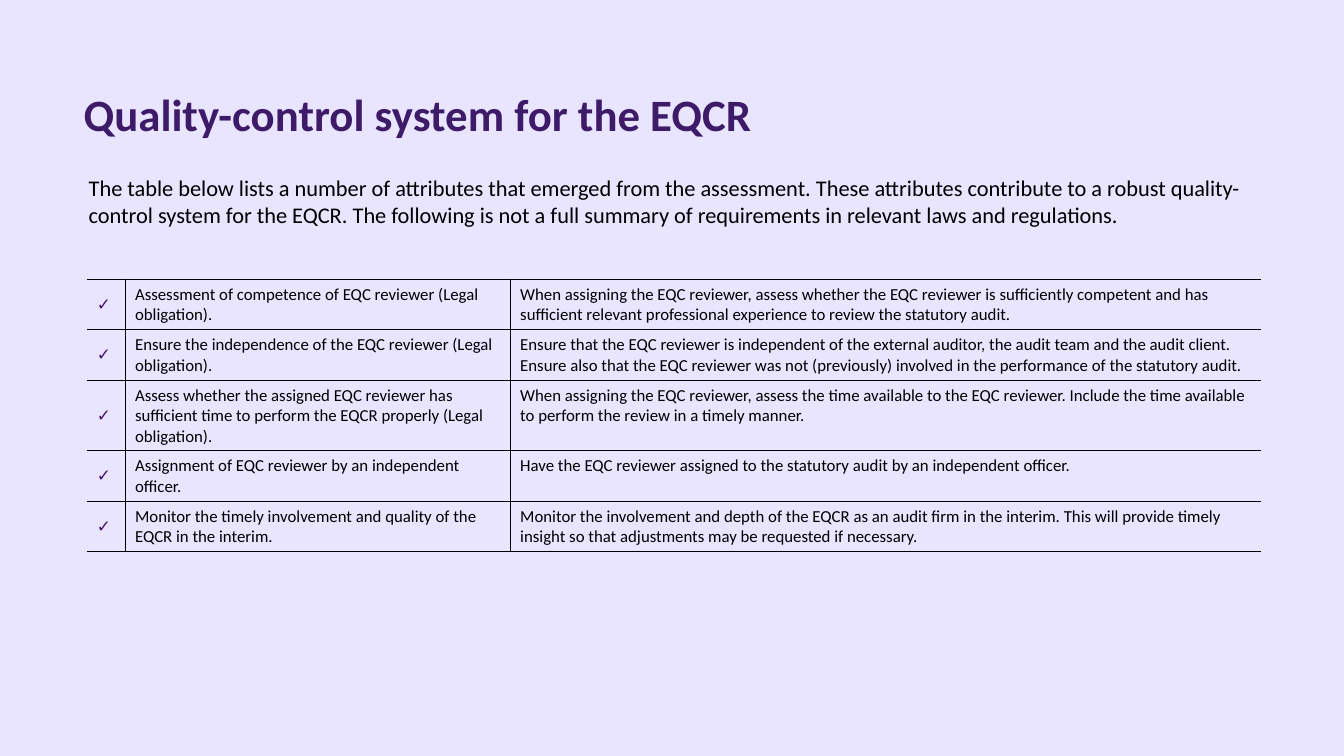
from dataclasses import dataclass

from lxml import etree
from pptx import Presentation
from pptx import util as u
from pptx.dml.color import RGBColor
from pptx.enum import text
from pptx.oxml import ns


@dataclass(frozen=True)
class Theme:
    font: str = "Calibri"
    back: str = "E9E5FF"
    title: str = "3E1B68"
    check: str = "45156C"
    ink: str = "000000"
    head: float = 32
    body: float = 16
    cell: float = 12
    rule: float = 0.5


@dataclass(frozen=True)
class Label:
    words: str
    left: float
    top: float
    width: float
    height: float
    size: float
    color: str
    bold: bool = False
    space: float = 1.0


@dataclass(frozen=True)
class Item:
    name: str
    detail: str
    lines: int = 2


LOOK = Theme()
LABELS = [
    Label("Quality-control system for the EQCR", 0.83, 0.95, 11.68, 0.93,
          LOOK.head, LOOK.title, True, 0.84),
    Label("The table below lists a number of attributes that emerged from the assessment. "
          "These attributes contribute to a robust quality-control system for the EQCR. "
          "The following is not a full summary of requirements in relevant laws and regulations.",
          0.88, 1.73, 11.63, 1.2, LOOK.body, LOOK.ink),
]
ITEMS = [
    Item("Assessment of competence of EQC reviewer (Legal obligation).",
         "When assigning the EQC reviewer, assess whether the EQC reviewer is sufficiently "
         "competent and has sufficient relevant professional experience to review the "
         "statutory audit."),
    Item("Ensure the independence of the EQC reviewer (Legal obligation).",
         "Ensure that the EQC reviewer is independent of the external auditor, the audit team "
         "and the audit client. Ensure also that the EQC reviewer was not (previously) involved "
         "in the performance of the statutory audit."),
    Item("Assess whether the assigned EQC reviewer has sufficient time to perform the EQCR "
         "properly (Legal obligation).",
         "When assigning the EQC reviewer, assess the time available to the EQC reviewer. "
         "Include the time available to perform the review in a timely manner.", 3),
    Item("Assignment of EQC reviewer by an independent officer.",
         "Have the EQC reviewer assigned to the statutory audit by an independent officer."),
    Item("Monitor the timely involvement and quality of the EQCR in the interim.",
         "Monitor the involvement and depth of the EQCR as an audit firm in the interim. "
         "This will provide timely insight so that adjustments may be requested if necessary."),
]
COLS = [0.38, 3.82, 7.45]
LINE, PAD = 0.2, 0.1


def style(para, size: float, color: str, bold: bool) -> None:
    for run in para.runs:
        font = run.font
        font.name, font.size, font.bold = LOOK.font, u.Pt(size), bold
        font.color.rgb = RGBColor.from_string(color)


def add_label(slide, label: Label) -> None:
    box = slide.shapes.add_textbox(u.Inches(label.left), u.Inches(label.top),
                                   u.Inches(label.width), u.Inches(label.height))
    frame = box.text_frame
    frame.word_wrap = True
    frame.margin_left = frame.margin_top = frame.margin_right = frame.margin_bottom = 0
    frame.text = label.words
    para = frame.paragraphs[0]
    para.line_spacing = label.space
    style(para, label.size, label.color, label.bold)


def set_rules(cell, shown: str) -> None:
    """Draw the sides named in shown (letters of LRTB) and hide the others."""
    props = cell._tc.get_or_add_tcPr()
    for spot, side in enumerate("LRTB"):
        line = etree.Element(ns.qn(f"a:ln{side}"), w=str(u.Pt(LOOK.rule)))
        if side in shown:
            fill = etree.SubElement(line, ns.qn("a:solidFill"))
            etree.SubElement(fill, ns.qn("a:srgbClr"), val=LOOK.ink)
        else:
            etree.SubElement(line, ns.qn("a:noFill"))
        props.insert(spot, line)


def fill_cell(cell, words: str, col: int) -> None:
    first, last = col == 0, col == len(COLS) - 1
    cell.fill.background()
    cell.text_frame.text = words
    style(cell.text_frame.paragraphs[0], LOOK.cell, LOOK.check if first else LOOK.ink, first)
    cell.vertical_anchor = text.MSO_ANCHOR.MIDDLE if first else text.MSO_ANCHOR.TOP
    set_rules(cell, "TB" + ("" if first else "L") + ("" if last else "R"))


def add_items(slide, items: list[Item]) -> None:
    tall = [item.lines * LINE + PAD for item in items]
    table = slide.shapes.add_table(len(items), len(COLS), u.Inches(0.86), u.Inches(2.77),
                                   u.Inches(sum(COLS)), u.Inches(sum(tall))).table
    table.first_row = table.horz_banding = False
    for col, width in zip(table.columns, COLS):
        col.width = u.Inches(width)
    for row, item, height in zip(table.rows, items, tall):
        row.height = u.Inches(height)
        for col, words in enumerate(("✓", item.name, item.detail)):
            fill_cell(row.cells[col], words, col)


def main() -> None:
    deck = Presentation()
    deck.slide_width, deck.slide_height = u.Inches(13.33), u.Inches(7.5)
    slide = deck.slides.add_slide(deck.slide_layouts[6])
    back = slide.background.fill
    back.solid()
    back.fore_color.rgb = RGBColor.from_string(LOOK.back)
    for label in LABELS:
        add_label(slide, label)
    add_items(slide, ITEMS)
    deck.save("out.pptx")


if __name__ == "__main__":
    main()
